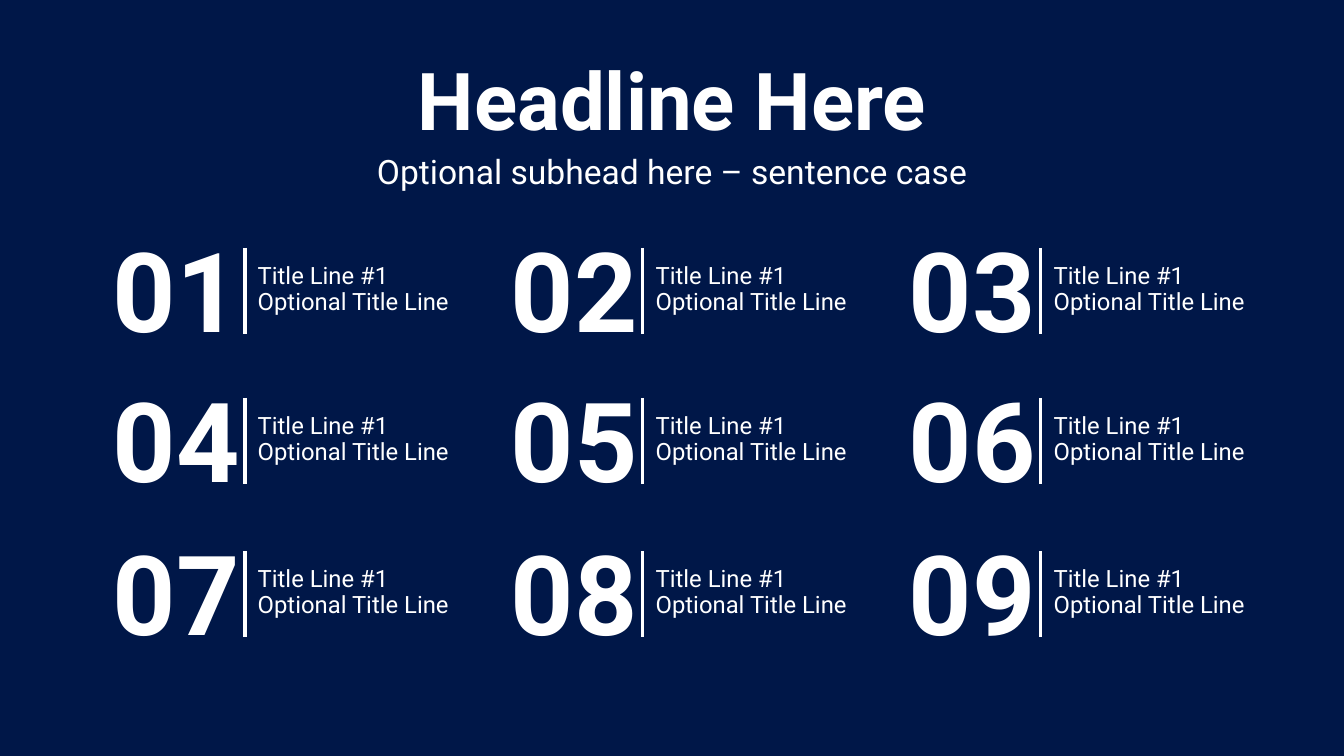
"""Build a navy slide with a headline, a subhead and a three-by-three grid of numbered titles."""
from dataclasses import dataclass

from lxml.etree import SubElement
from pptx import Presentation
from pptx.dml.color import RGBColor
from pptx.enum.shapes import MSO_CONNECTOR, MSO_SHAPE
from pptx.enum.text import MSO_ANCHOR, MSO_AUTO_SIZE, PP_ALIGN
from pptx.oxml.ns import qn
from pptx.shapes.autoshape import Shape
from pptx.slide import Slide
from pptx.util import Emu, Pt

NAVY = RGBColor(0x00, 0x17, 0x48)
WHITE = RGBColor(0xFF, 0xFF, 0xFF)
EMU_PER_PX = 9525
SLIDE_W, SLIDE_H = 1280, 720
COLUMN_X, COLUMN_PITCH, COLUMNS = 98, 379, 3
ROW_TOPS = (205, 348, 494)
FONT = {"name": "Roboto"}


@dataclass(frozen=True)
class Box:
    """A rectangle in px."""
    x: int
    y: int
    w: int
    h: int


@dataclass(frozen=True)
class Style:
    """Formats for the text frame, paragraphs and font of one kind of text."""
    frame: dict
    paragraph: dict
    font: dict


@dataclass(frozen=True)
class Item:
    """One numbered entry of the grid."""
    x: int
    y: int
    number: str
    lines: tuple[str, ...]


HEADING_FRAME = {"word_wrap": True, "vertical_anchor": MSO_ANCHOR.TOP,
                 "auto_size": MSO_AUTO_SIZE.SHAPE_TO_FIT_TEXT}
ITEM_FRAME = HEADING_FRAME | {"vertical_anchor": MSO_ANCHOR.MIDDLE}
CENTERED = {"alignment": PP_ALIGN.CENTER, "space_before": Pt(0)}
HEADLINE = Style(HEADING_FRAME, CENTERED, FONT | {"size": Pt(57), "bold": True})
SUBHEAD = Style(HEADING_FRAME, CENTERED, FONT | {"size": Pt(24), "bold": False})
NUMBER = Style(ITEM_FRAME | {"word_wrap": False}, CENTERED,
               FONT | {"size": Pt(79), "bold": True})
LABEL = Style(ITEM_FRAME, {"alignment": PP_ALIGN.LEFT, "line_spacing": Pt(18.4)},
              FONT | {"size": Pt(17)})


def px(n: int) -> Emu:
    """Turn px into EMU."""
    return Emu(n * EMU_PER_PX)


def apply(target: object, formats: dict) -> None:
    """Set each named format on the target."""
    for name, value in formats.items():
        setattr(target, name, value)


def write(sp: Shape, box: Box, lines: tuple[str, ...], style: Style) -> None:
    """Place a text shape and fill it with one paragraph a line."""
    apply(sp, {"left": px(box.x), "top": px(box.y),
               "width": px(box.w), "height": px(box.h)})
    tf = sp.text_frame
    apply(tf, style.frame)
    for i, line in enumerate(lines):
        p = tf.add_paragraph() if i else tf.paragraphs[0]
        apply(p, style.paragraph)
        r = p.add_run()
        r.text = line
        apply(r.font, style.font)
        r.font.color.rgb = WHITE


def add_text(slide: Slide, box: Box, lines: tuple[str, ...], style: Style) -> None:
    """Add a text box."""
    sp = slide.shapes.add_textbox(px(box.x), px(box.y), px(box.w), px(box.h))
    write(sp, box, lines, style)


def add_divider(slide: Slide, x: int, y: int, h: int) -> None:
    """Add an upright white line."""
    line = slide.shapes.add_connector(MSO_CONNECTOR.STRAIGHT, px(x), px(y), px(x), px(y + h))
    line.line.color.rgb = WHITE
    line.line.width = Pt(2.75)
    SubElement(line.element.spPr, qn("a:effectLst"))


def add_item(slide: Slide, item: Item) -> None:
    """Add a label, its number and the divider between them."""
    add_text(slide, Box(item.x + 138, item.y + 41, 203, 59), item.lines, LABEL)
    add_text(slide, Box(item.x, item.y, 140, 139), (item.number,), NUMBER)
    add_divider(slide, item.x + 135, item.y + 31, 82)


def add_backdrop(slide: Slide) -> None:
    """Add the navy panel behind everything else."""
    sp = slide.shapes.add_shape(MSO_SHAPE.RECTANGLE, 0, 0, px(SLIDE_W), px(SLIDE_H))
    sp.shadow.inherit = False
    sp.fill.solid()
    sp.fill.fore_color.rgb = NAVY
    sp.line.fill.background()
    sp.element.getparent().insert(2, sp.element)


def main() -> None:
    """Build and save the slide."""
    prs = Presentation()
    prs.slide_width, prs.slide_height = px(SLIDE_W), px(SLIDE_H)
    slide = prs.slides.add_slide(prs.slide_layouts[0])
    add_backdrop(slide)
    write(slide.shapes.title, Box(48, 43, 1184, 102), ("Headline Here",), HEADLINE)
    write(slide.placeholders[1], Box(48, 139, 1184, 48),
          ("Optional subhead here – sentence case",), SUBHEAD)
    for row, y in enumerate(ROW_TOPS):
        for col in range(COLUMNS):
            number = f"{row * COLUMNS + col + 1:02d}"
            add_item(slide, Item(COLUMN_X + col * COLUMN_PITCH, y, number,
                                 ("Title Line #1", "Optional Title Line")))
    prs.save("out.pptx")


if __name__ == "__main__":
    main()
